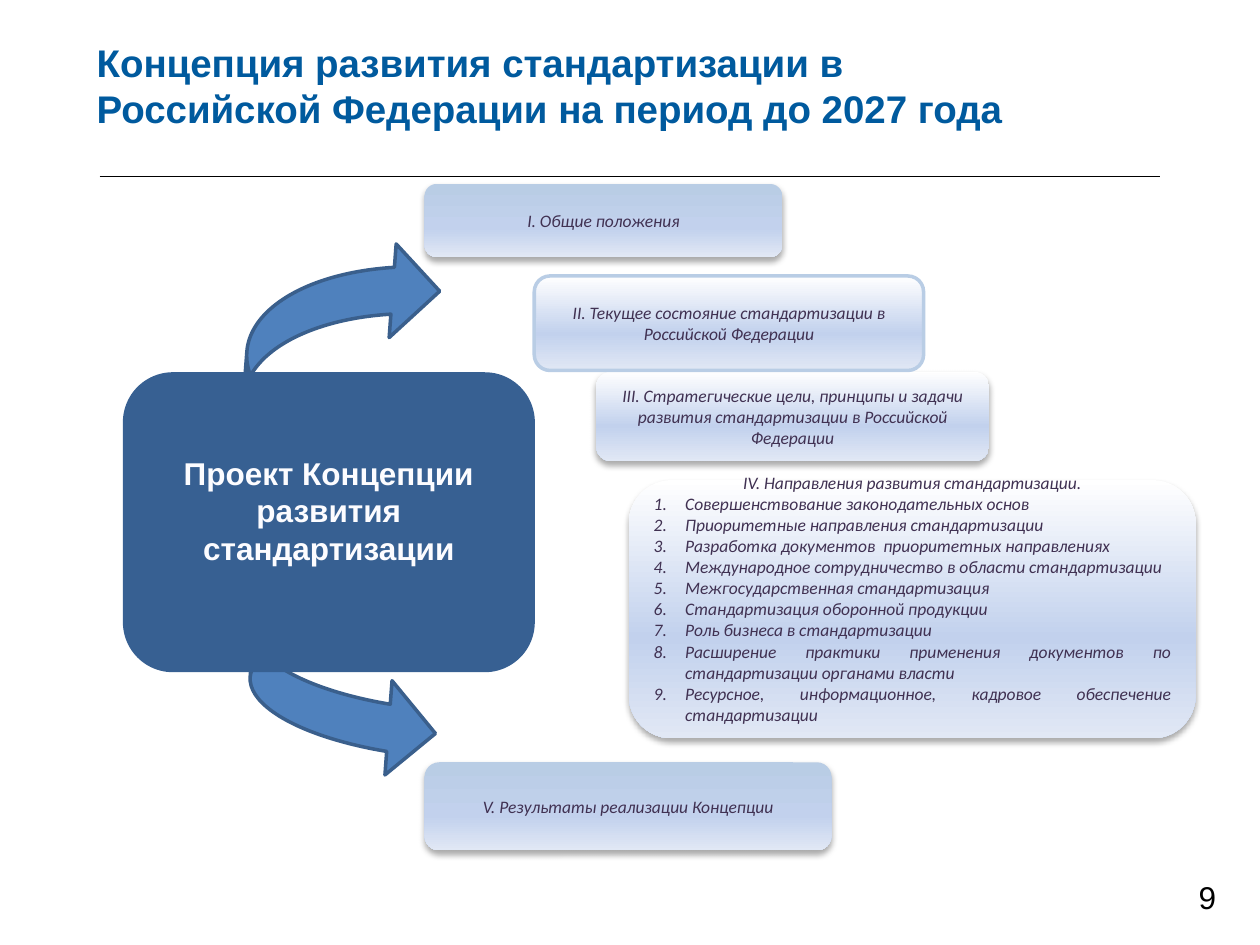
import copy
from dataclasses import dataclass

import lxml.etree
import pptx
import pptx.dml.color
import pptx.enum.shapes
import pptx.enum.text
import pptx.oxml
import pptx.oxml.ns
import pptx.util

Pt = pptx.util.Pt
qn = pptx.oxml.ns.qn
SHAPE = pptx.enum.shapes.MSO_SHAPE
ALIGN = pptx.enum.text.PP_ALIGN
ANCHOR = pptx.enum.text.MSO_ANCHOR

COLORS = {
    "title": "005A9E",
    "black": "000000",
    "section_text": "403152",
    "pale_blue": "B9CDE5",
    "white": "FFFFFF",
    "middle": "C2D1ED",
    "bottom": "E1E8F5",
    "arrow": "4F81BD",
    "arrow_edge": "3A5F8C",
    "project": "376092",
    "project_text": "FCFCFF",
}


@dataclass
class Box:
    left: float
    top: float
    width: float
    height: float

    def lengths(self) -> tuple:
        return Pt(self.left), Pt(self.top), Pt(self.width), Pt(self.height)


@dataclass
class Section:
    box: Box
    heading: str
    top_color: str = "white"
    outlined: bool = False
    directions: tuple = ()


@dataclass
class Arrow:
    box: Box
    flipped: bool


@dataclass
class TextStyle:
    size: float
    color: str
    font: str = "Arial"
    bold: bool = False
    italic: bool = False


def rgb(name: str) -> pptx.dml.color.RGBColor:
    return pptx.dml.color.RGBColor.from_string(COLORS[name])


def write(paragraph, text: str, style: TextStyle, align=ALIGN.LEFT) -> None:
    paragraph.alignment = align
    run = paragraph.add_run()
    run.text = text
    run.font.name = style.font
    run.font.size = Pt(style.size)
    run.font.bold = style.bold
    run.font.italic = style.italic
    run.font.color.rgb = rgb(style.color)


def add_label(slide, box: Box, text: str, style: TextStyle, align=ALIGN.LEFT) -> None:
    label = slide.shapes.add_textbox(*box.lengths())
    label.text_frame.word_wrap = True
    write(label.text_frame.paragraphs[0], text, style, align)


def add_solid(slide, kind, box: Box, color: str):
    solid = slide.shapes.add_shape(kind, *box.lengths())
    solid.shadow.inherit = False
    solid.fill.solid()
    solid.fill.fore_color.rgb = rgb(color)
    solid.line.fill.background()
    return solid


def add_arrow(slide, arrow: Arrow) -> None:
    curve = add_solid(slide, SHAPE.CURVED_LEFT_ARROW, arrow.box, "arrow")
    curve.line.color.rgb = rgb("arrow_edge")
    curve.line.width = Pt(2)
    curve.rotation = 184.3
    if arrow.flipped:
        curve.element.spPr.find(qn("a:xfrm")).set("flipV", "1")


def fill_gradient(panel, top_color: str) -> None:
    panel.fill.gradient()
    stop_list = panel.element.spPr.find(".//" + qn("a:gsLst"))
    stop_list.append(copy.deepcopy(stop_list[-1]))
    stops = zip(panel.fill.gradient_stops, (0, 0.61, 1), (top_color, "middle", "bottom"))
    for stop, position, color in stops:
        stop.position = position
        stop.color.rgb = rgb(color)
    panel.fill.gradient_angle = 270


def add_shadow(panel) -> None:
    effects = panel.element.spPr.find(qn("a:effectLst"))
    shadow = lxml.etree.SubElement(
        effects, qn("a:outerShdw"), blurRad=str(Pt(3.5)), dist=str(Pt(2.2)),
        dir="5400000", rotWithShape="0")
    color = lxml.etree.SubElement(shadow, qn("a:srgbClr"), val=COLORS["black"])
    lxml.etree.SubElement(color, qn("a:alpha"), val="32000")


def add_section(slide, section: Section) -> None:
    panel = slide.shapes.add_shape(SHAPE.FLOWCHART_ALTERNATE_PROCESS, *section.box.lengths())
    panel.shadow.inherit = False
    fill_gradient(panel, section.top_color)
    if section.outlined:
        panel.line.color.rgb = rgb("pale_blue")
        panel.line.width = Pt(2)
    else:
        panel.line.fill.background()
        add_shadow(panel)
    frame = panel.text_frame
    frame.word_wrap = True
    frame.vertical_anchor = ANCHOR.MIDDLE
    style = TextStyle(10, "section_text", "Calibri", italic=True)
    write(frame.paragraphs[0], section.heading, style, ALIGN.CENTER)
    if section.directions:
        frame.margin_bottom = Pt(15.8)
    for direction in section.directions:
        paragraph = frame.add_paragraph()
        properties = paragraph._p.get_or_add_pPr()
        properties.set("marL", str(Pt(18)))
        properties.set("indent", str(Pt(-18)))
        lxml.etree.SubElement(properties, qn("a:buFont"), typeface="+mj-lt")
        lxml.etree.SubElement(properties, qn("a:buAutoNum"), type="arabicPeriod")
        write(paragraph, direction, style, ALIGN.JUSTIFY)


def add_project(slide) -> None:
    block = add_solid(slide, SHAPE.ROUNDED_RECTANGLE, Box(102.2, 180.7, 171.4, 235.4), "project")
    block.rotation = 90
    caption = add_solid(slide, SHAPE.RECTANGLE, Box(94.3, 255.6, 187.2, 72.7), "project")
    frame = caption.text_frame
    frame.word_wrap = False
    frame.vertical_anchor = ANCHOR.TOP
    style = TextStyle(18, "project_text", bold=True)
    for index, text in enumerate(("Проект Концепции", "развития", "стандартизации")):
        paragraph = frame.add_paragraph() if index else frame.paragraphs[0]
        write(paragraph, text, style, ALIGN.CENTER)


def add_rule(slide) -> None:
    rule = slide.shapes.add_connector(
        pptx.enum.shapes.MSO_CONNECTOR.STRAIGHT, Pt(57), Pt(100.8), Pt(663), Pt(100.8))
    rule.line.color.rgb = rgb("black")
    rule.line.width = Pt(0.75)
    lxml.etree.SubElement(rule.element.spPr, qn("a:effectLst"))


RESULTS = Section(Box(242.6, 435.6, 232.6, 50.4), "V. Результаты реализации Концепции", "pale_blue")
GOALS = Section(
    Box(340.6, 212.4, 224.6, 51.1),
    "III. Стратегические цели, принципы и задачи развития стандартизации в Российской Федерации")
GENERAL = Section(Box(242.6, 105.1, 204.5, 41.8), "I. Общие положения", "pale_blue")
CURRENT_STATE = Section(
    Box(305.3, 157.7, 222.5, 54),
    "II. Текущее состояние стандартизации в Российской Федерации", outlined=True)
DIRECTIONS = Section(
    Box(359.3, 274.3, 324, 147.6), "IV. Направления развития стандартизации.",
    directions=(
        "Совершенствование законодательных основ",
        "Приоритетные направления стандартизации",
        "Разработка документов  приоритетных направлениях",
        "Международное сотрудничество в области стандартизации",
        "Межгосударственная стандартизация",
        "Стандартизация оборонной продукции",
        "Роль бизнеса в стандартизации",
        "Расширение практики применения документов по стандартизации органами власти",
        "Ресурсное, информационное, кадровое обеспечение стандартизации",
    ))
ARROWS = (
    Arrow(Box(143.3, 326.2, 108, 115.9), True),
    Arrow(Box(140.4, 135.4, 107.3, 152.6), False),
)


def main() -> None:
    deck = pptx.Presentation()
    deck.slide_width, deck.slide_height = Pt(720), Pt(540)
    slide = deck.slides.add_slide(deck.slide_layouts[6])
    add_rule(slide)
    add_label(slide, Box(534.2, 498.2, 167.8, 28.8), "9", TextStyle(18, "black"), ALIGN.RIGHT)
    for section in (RESULTS, GOALS):
        add_section(slide, section)
    for arrow in ARROWS:
        add_arrow(slide, arrow)
    add_project(slide)
    for section in (GENERAL, CURRENT_STATE):
        add_section(slide, section)
    add_label(
        slide, Box(48.2, 18.7, 573.8, 72.7),
        "Концепция развития стандартизации в Российской Федерации на период до 2027 года",
        TextStyle(22, "title", bold=True))
    add_section(slide, DIRECTIONS)
    deck.save("out.pptx")


if __name__ == "__main__":
    main()
